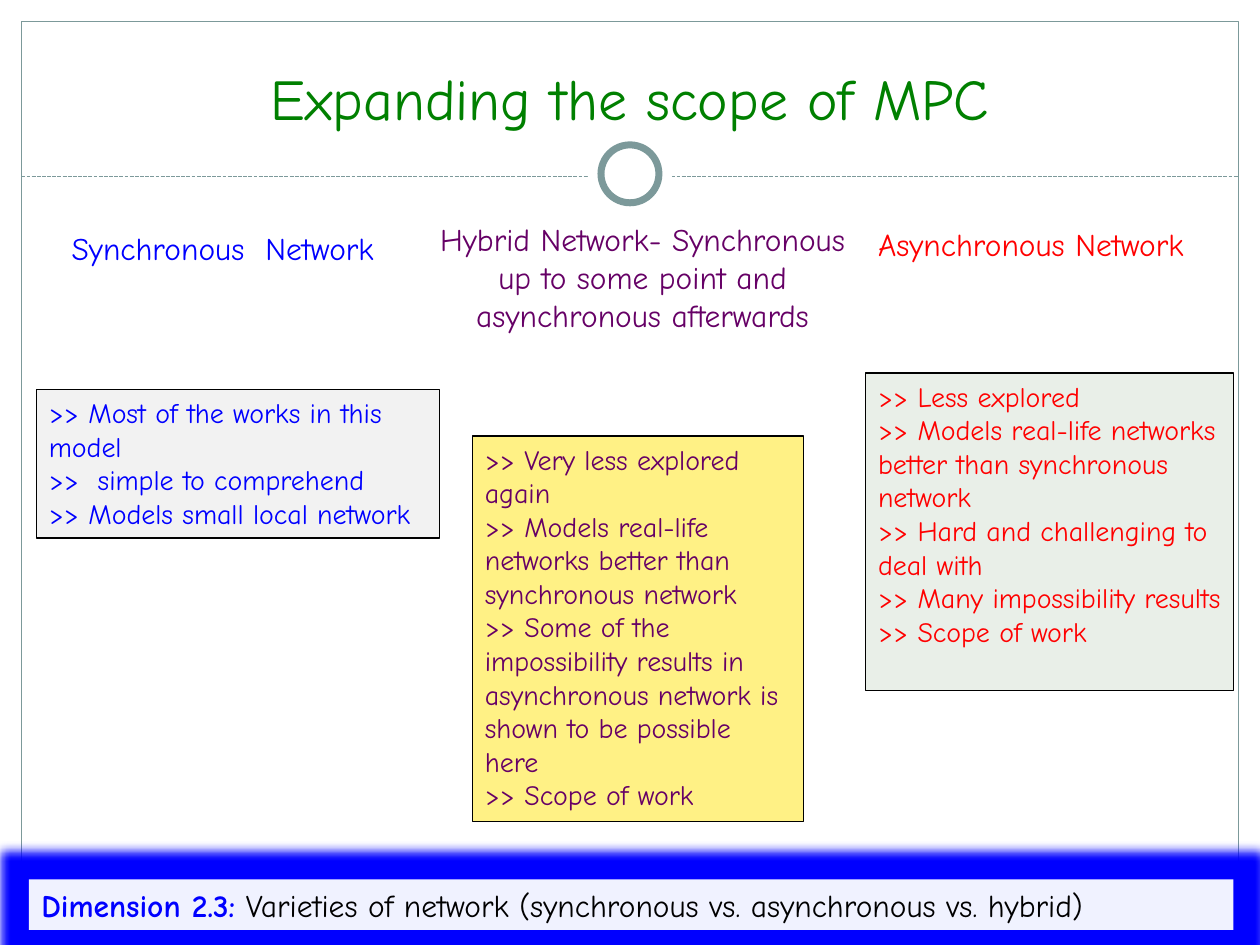
from dataclasses import dataclass

from lxml.etree import SubElement
from pptx import Presentation
from pptx.dml.color import RGBColor
from pptx.enum.dml import MSO_LINE_DASH_STYLE as Dash
from pptx.enum.shapes import MSO_CONNECTOR as Connector, MSO_SHAPE as Shape
from pptx.enum.text import MSO_ANCHOR as Anchor, PP_ALIGN as Align
from pptx.oxml.ns import qn
from pptx.util import Inches, Pt


@dataclass(frozen=True)
class Theme:
    """Colours, font and type sizes of the slide."""
    font: str = "Comic Neue"
    title_size: int = 33
    heading_size: int = 18
    body_size: int = 16
    white: str = "FFFFFF"
    black: str = "000000"
    frame: str = "7C999A"
    title: str = "008000"
    sync: str = "0000FF"
    hybrid: str = "660066"
    asynchronous: str = "FF0000"
    sync_fill: str = "F2F2F2"
    hybrid_fill: str = "FFF185"
    async_fill: str = "E9EFE8"
    banner_fill: str = "F0F2FF"


THEME = Theme()

COLUMNS = [
    dict(color=THEME.sync, fill=THEME.sync_fill, align=Align.LEFT, wrap=False,
         heading_box=(0.47, 1.77, 2.86, 0.4), heading="Synchronous  Network",
         body_box=(0.29, 3.09, 3.2, 1.18),
         points=[">> Most of the works in this model",
                 ">>  simple to comprehend",
                 ">> Models small local network"]),
    dict(color=THEME.hybrid, fill=THEME.hybrid_fill, align=Align.CENTER, wrap=True,
         heading_box=(3.33, 1.7, 3.54, 1.31),
         heading="Hybrid Network- Synchronous up to some point and asynchronous afterwards",
         body_box=(3.75, 3.46, 2.63, 3.06),
         points=[">> Very less explored again",
                 ">> Models real-life networks better than synchronous network",
                 ">> Some of the impossibility results in asynchronous network "
                 "is shown to be possible here",
                 ">> Scope of work"]),
    dict(color=THEME.asynchronous, fill=THEME.async_fill, align=Align.LEFT, wrap=False,
         heading_box=(6.87, 1.74, 2.92, 0.4), heading="Asynchronous Network",
         body_box=(6.87, 2.96, 2.92, 2.52),
         points=[">> Less explored",
                 ">> Models real-life networks better than synchronous network",
                 ">> Hard and challenging to deal with",
                 ">> Many impossibility results",
                 ">> Scope of work"]),
]


def to_inches(box):
    """Turn a box of numbers into lengths."""
    return [Inches(value) for value in box]


def set_all(target, values):
    """Set each named attribute on the target."""
    for name, value in values.items():
        setattr(target, name, value)


def add_panel(page, kind, box, fill=None, line=None, width=0.75):
    """Add a flat preset shape with an optional fill and outline."""
    panel = page.shapes.add_shape(kind, *to_inches(box))
    panel.shadow.inherit = False
    if fill:
        panel.fill.solid()
        panel.fill.fore_color.rgb = RGBColor.from_string(fill)
    else:
        panel.fill.background()
    if line:
        panel.line.color.rgb = RGBColor.from_string(line)
        panel.line.width = Pt(width)
    else:
        panel.line.fill.background()
    return panel


def write(shape, paragraphs, size, align=Align.LEFT, anchor=Anchor.TOP, wrap=True):
    """Fill a shape with paragraphs, each a list of (text, colour, bold) spans."""
    frame = shape.text_frame
    set_all(frame, dict(word_wrap=wrap, vertical_anchor=anchor))
    for index, spans in enumerate(paragraphs):
        para = frame.add_paragraph() if index else frame.paragraphs[0]
        para.alignment = align
        for text, color, bold in spans:
            span = para.add_run()
            span.text = text
            set_all(span.font, dict(name=THEME.font, size=Pt(size), bold=bold))
            span.font.color.rgb = RGBColor.from_string(color)


def add_frame(page, box, rule_top):
    """Draw the slide border, the dashed rule and the ring on its middle."""
    left, _, width, _ = box
    add_panel(page, Shape.RECTANGLE, box, line=THEME.frame)
    rule = page.shapes.add_connector(
        Connector.STRAIGHT, *to_inches((left, rule_top, left + width, rule_top)))
    set_all(rule.line, dict(width=Pt(0.75), dash_style=Dash.SQUARE_DOT))
    rule.line.color.rgb = RGBColor.from_string(THEME.frame)
    SubElement(rule.line._get_or_add_ln().getparent(), qn("a:effectLst"))
    middle, ring_middle = left + width / 2, rule_top - 0.02
    for size, line in ((0.67, None), (0.46, THEME.frame)):
        ring = (middle - size / 2, ring_middle - size / 2, size, size)
        add_panel(page, Shape.OVAL, ring, THEME.white, line, width=4)


def add_title(page, box, text):
    """Place the centred slide title."""
    title = page.shapes.add_textbox(*to_inches(box))
    write(title, [[(text, THEME.title, False)]], THEME.title_size,
          Align.CENTER, Anchor.BOTTOM)


def add_column(page, heading_box, body_box, heading, points, color, fill, align, wrap):
    """Place a network heading and its box of points."""
    label = page.shapes.add_textbox(*to_inches(heading_box))
    write(label, [[(heading, color, False)]], THEME.heading_size, align, wrap=wrap)
    panel = add_panel(page, Shape.RECTANGLE, body_box, fill, THEME.black)
    write(panel, [[(point, color, False)] for point in points], THEME.body_size)


def add_banner(page, box, label, text):
    """Place the glowing banner at the foot of the slide."""
    banner = add_panel(page, Shape.RECTANGLE, box, THEME.banner_fill)
    effects = banner.fill._xPr.find(qn("a:effectLst"))
    glow = SubElement(effects, qn("a:glow"), rad=str(Pt(11)))
    SubElement(glow, qn("a:srgbClr"), val=THEME.sync)
    write(banner, [[(label, THEME.sync, True), (text, THEME.black, False)]],
          THEME.heading_size)


def main():
    """Build the slide and save the deck."""
    deck = Presentation()
    set_all(deck, dict(slide_width=Inches(10), slide_height=Inches(7.5)))
    page = deck.slides.add_slide(deck.slide_layouts[6])
    add_frame(page, (0.17, 0.17, 9.66, 7.16), rule_top=1.4)
    add_title(page, (0.69, 0.18, 8.62, 0.92), "Expanding the scope of MPC")
    for column in COLUMNS:
        add_column(page, **column)
    add_banner(page, (0.23, 6.98, 9.56, 0.4), "Dimension 2.3:",
               " Varieties of network (synchronous vs. asynchronous vs. hybrid)")
    deck.save("out.pptx")


if __name__ == "__main__":
    main()
